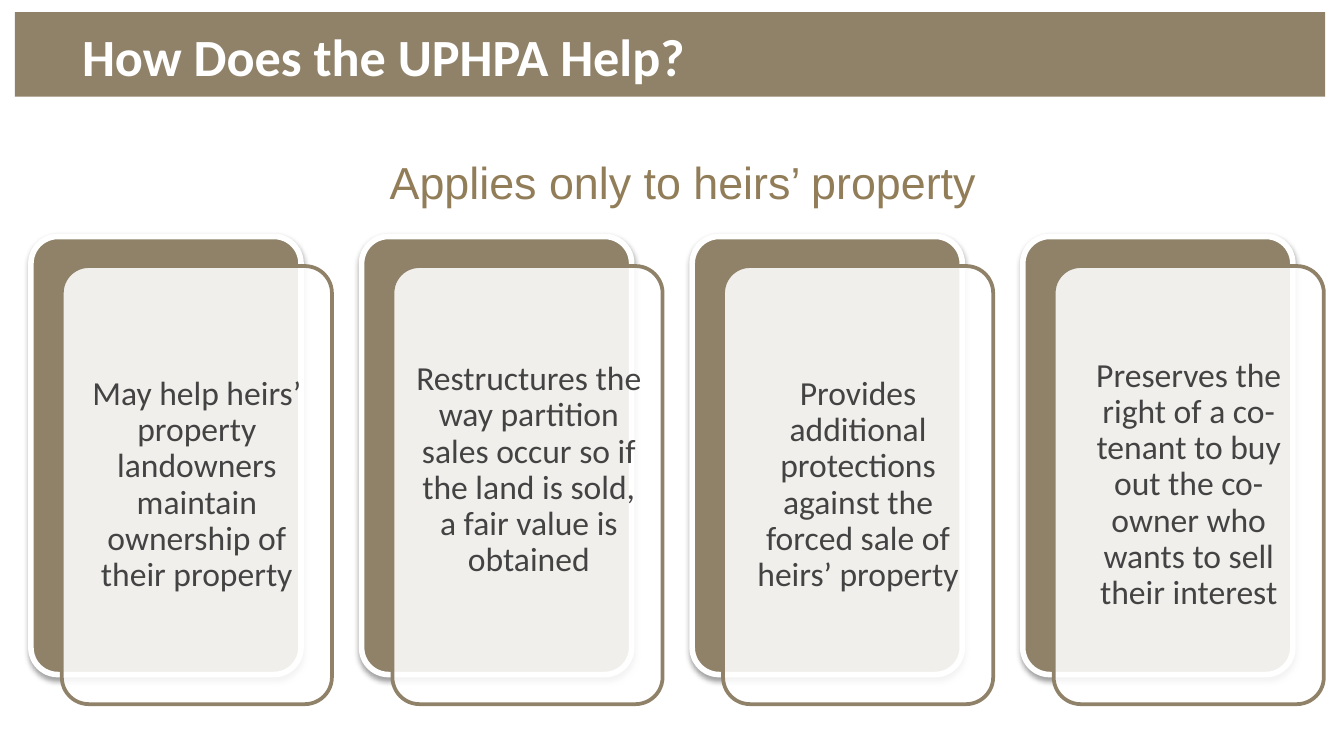
import pptx
import pptx.dml.color
import pptx.enum.shapes
import pptx.enum.text
import pptx.oxml
import pptx.oxml.ns
import pptx.util

RGBColor = pptx.dml.color.RGBColor
Inches = pptx.util.Inches
Shape = pptx.enum.shapes.MSO_SHAPE
Align = pptx.enum.text.PP_ALIGN
Anchor = pptx.enum.text.MSO_ANCHOR

BANNER = RGBColor(0x90, 0x82, 0x69)
TAUPE = RGBColor(0x8F, 0x82, 0x69)
GOLD = RGBColor(0x92, 0x7D, 0x59)
WHITE = RGBColor(0xFF, 0xFF, 0xFF)
CHARCOAL = RGBColor(0x43, 0x43, 0x43)

CARD_LEFT, CARD_TOP = 0.23, 1.76
CARD_WIDTH, CARD_HEIGHT = 2.01, 3.26
CARD_PITCH = 2.46
PANEL_RIGHT, PANEL_DOWN = 0.23, 0.22

BENEFITS = [
    "May help heirs’ property landowners maintain ownership of their property",
    "Restructures the way partition sales occur so if the land is sold, a fair value is obtained",
    "Provides additional protections against the forced sale of heirs’ property",
    "Preserves the right of a co-tenant to buy out the co-owner who wants to sell their interest",
]
BOXED_BENEFIT = 1

SHADOW = (
    f'<a:effectLst {pptx.oxml.ns.nsdecls("a")}>'
    '<a:outerShdw blurRad="39400" dist="20300" dir="5400000" rotWithShape="0">'
    '<a:srgbClr val="000000"><a:alpha val="36000"/></a:srgbClr>'
    "</a:outerShdw></a:effectLst>"
)


def write(box, text, size, color, font="Calibri", bold=False,
          align=Align.CENTER, spacing=1.0, anchor=Anchor.TOP, margins=(0.1, 0.05)):
    frame = box.text_frame
    frame.text = text
    frame.word_wrap = True
    frame.vertical_anchor = anchor
    frame.margin_left = frame.margin_right = Inches(margins[0])
    frame.margin_top = frame.margin_bottom = Inches(margins[1])
    para = frame.paragraphs[0]
    para.alignment = align
    para.line_spacing = spacing
    span = para.runs[0]
    span.font.name = font
    span.font.size = pptx.util.Pt(size)
    span.font.bold = bold
    span.font.color.rgb = color


def add_text(page, area, text, size, color, **style):
    box = page.shapes.add_textbox(*map(Inches, area))
    write(box, text, size, color, **style)
    return box


def add_block(page, kind, area, fill, line=None, line_width=0):
    block = page.shapes.add_shape(kind, *map(Inches, area))
    block.shadow.inherit = False
    block.fill.solid()
    block.fill.fore_color.rgb = fill
    if line is None:
        block.line.fill.background()
    else:
        block.line.color.rgb = line
        block.line.width = pptx.util.Pt(line_width)
    return block


def add_card(page, column):
    left = CARD_LEFT + column * CARD_PITCH
    size = (CARD_WIDTH, CARD_HEIGHT)
    back = add_block(page, Shape.ROUNDED_RECTANGLE, (left, CARD_TOP, *size), TAUPE, WHITE, 3)
    back.adjustments[0] = 0.1
    properties = back.element.spPr
    effects = properties.find(pptx.oxml.ns.qn("a:effectLst"))
    properties.replace(effects, pptx.oxml.parse_xml(SHADOW))

    panel_area = (left + PANEL_RIGHT, CARD_TOP + PANEL_DOWN, *size)
    panel = add_block(page, Shape.ROUNDED_RECTANGLE, panel_area, WHITE, TAUPE, 2)
    panel.adjustments[0] = 0.1
    color = panel.element.spPr.find(".//" + pptx.oxml.ns.qn("a:srgbClr"))
    color.append(pptx.oxml.parse_xml(
        f'<a:alpha {pptx.oxml.ns.nsdecls("a")} val="88000"/>'))
    return panel


def main():
    deck = pptx.Presentation()
    deck.slide_width = Inches(10)
    deck.slide_height = deck.slide_width * 9 // 16
    page = deck.slides.add_slide(deck.slide_layouts[6])

    add_block(page, Shape.RECTANGLE, (0.11, 0.09, 9.75, 0.63), BANNER)
    title = add_text(page, (0.34, 0.01, 7.99, 0.79), "How Does the UPHPA Help?", 28, WHITE,
                     bold=True, align=Align.LEFT, spacing=1.15, margins=(0.1, 0.1))
    title.text_frame.margin_left = Inches(0.27)
    add_text(page, (1.88, 1.1, 6.4, 0.5), "Applies only to heirs’ property", 24, GOLD, font="Arial")

    for column, benefit in enumerate(BENEFITS):
        panel = add_card(page, column)
        if column == BOXED_BENEFIT:
            add_text(page, (2.98, 2.64, 1.91, 2.28), benefit, 18, CHARCOAL, spacing=0.9)
        else:
            write(panel, benefit, 18, CHARCOAL, spacing=0.9,
                  anchor=Anchor.MIDDLE, margins=(0.07, 0.07))

    deck.save("out.pptx")


if __name__ == "__main__":
    main()
